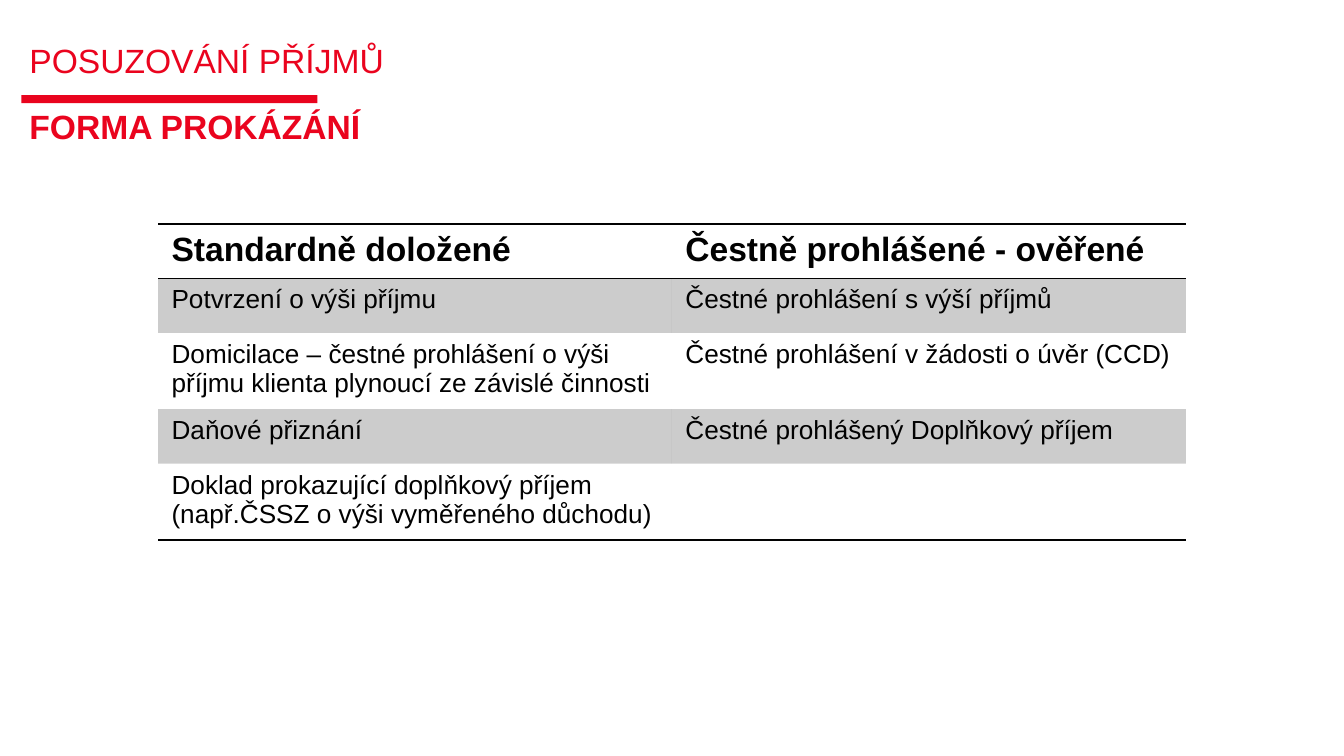
from lxml.etree import SubElement
from pptx import Presentation
from pptx.dml.color import RGBColor
from pptx.enum.shapes import MSO_SHAPE
from pptx.enum.text import MSO_ANCHOR, MSO_AUTO_SIZE
from pptx.oxml import parse_xml
from pptx.oxml.ns import nsdecls, qn
from pptx.util import Pt

COLORS = {"bar": "E9041E", "heading": "EA041E", "ink": "010101"}
NO_STYLE = "{2D5ABB26-0587-4C30-8999-92F81FD0307C}"


def add_run(p, text, size, bold, color):
    r = p.add_run()
    r.text = text
    font = {"name": "Arial", "size": Pt(size), "bold": bold}
    for name, value in font.items():
        setattr(r.font, name, value)
    r.font.color.rgb = RGBColor.from_string(COLORS[color])


def add_border(cell, side):
    # Borders come before the fill in the cell properties
    cell._tc.get_or_add_tcPr().insert(0, parse_xml(
        f'<a:{side} {nsdecls("a")} w="{Pt(1)}"><a:solidFill>'
        f'<a:srgbClr val="{COLORS["ink"]}"/></a:solidFill></a:{side}>'))


prs = Presentation()
prs.slide_width, prs.slide_height = Pt(720), Pt(405)
s = prs.slides.add_slide(prs.slide_layouts[6])

# Red bar between the headings
bar = s.shapes.add_shape(MSO_SHAPE.RECTANGLE, Pt(11.4), Pt(51), Pt(158.6), Pt(4.3))
bar.shadow.inherit = False
bar.fill.solid()
bar.fill.fore_color.rgb = RGBColor.from_string(COLORS["bar"])
bar.line.fill.background()

# Headings above and below the bar
headings = [("POSUZOVÁNÍ PŘÍJMŮ", 25.9, 460, False),
            ("FORMA PROKÁZÁNÍ", 61.2, 454.3, True)]
frame = {"word_wrap": True, "auto_size": MSO_AUTO_SIZE.SHAPE_TO_FIT_TEXT,
         "vertical_anchor": MSO_ANCHOR.BOTTOM, "margin_left": 0,
         "margin_right": 0, "margin_top": 0, "margin_bottom": 0}
for text, top, width, bold in headings:
    sp = s.shapes.add_textbox(Pt(15.8), Pt(top), Pt(width), Pt(16.6))
    tf = sp.text_frame
    for name, value in frame.items():
        setattr(tf, name, value)
    p = tf.paragraphs[0]
    p.line_spacing = 0.75
    add_run(p, text, 18, bold, "heading")

# Table of income proofs
rows = [
    ("Standardně doložené", "Čestně prohlášené - ověřené"),
    ("Potvrzení o výši příjmu", "Čestné prohlášení s výší příjmů"),
    ("Domicilace – čestné prohlášení o výši příjmu klienta plynoucí ze závislé činnosti",
     "Čestné prohlášení v žádosti o úvěr (CCD)"),
    ("Daňové přiznání", "Čestné prohlášený Doplňkový příjem"),
    ("Doklad prokazující doplňkový příjem (např.ČSSZ o výši vyměřeného důchodu)", ""),
]
row_height = 29.2
table = s.shapes.add_table(len(rows), 2, Pt(84.7), Pt(120), Pt(550.6),
                           Pt(row_height * len(rows))).table
table._tbl.tblPr.find(qn("a:tableStyleId")).text = NO_STYLE
for i, texts in enumerate(rows):
    header = i == 0
    for j, text in enumerate(texts):
        cell = table.cell(i, j)
        if text:
            add_run(cell.text_frame.paragraphs[0], text,
                    18 if header else 14, header, "ink")
        # Odd rows are shaded with a transparent band
        if i % 2:
            cell.fill.solid()
            cell.fill.fore_color.rgb = RGBColor.from_string(COLORS["ink"])
            tint = cell._tc.tcPr.find(".//" + qn("a:srgbClr"))
            SubElement(tint, qn("a:alpha"), val="20000")
        else:
            cell.fill.background()
        # Rules around the header and under the last row
        if header or i == len(rows) - 1:
            add_border(cell, "lnB")
        if header:
            add_border(cell, "lnT")

prs.save("out.pptx")
